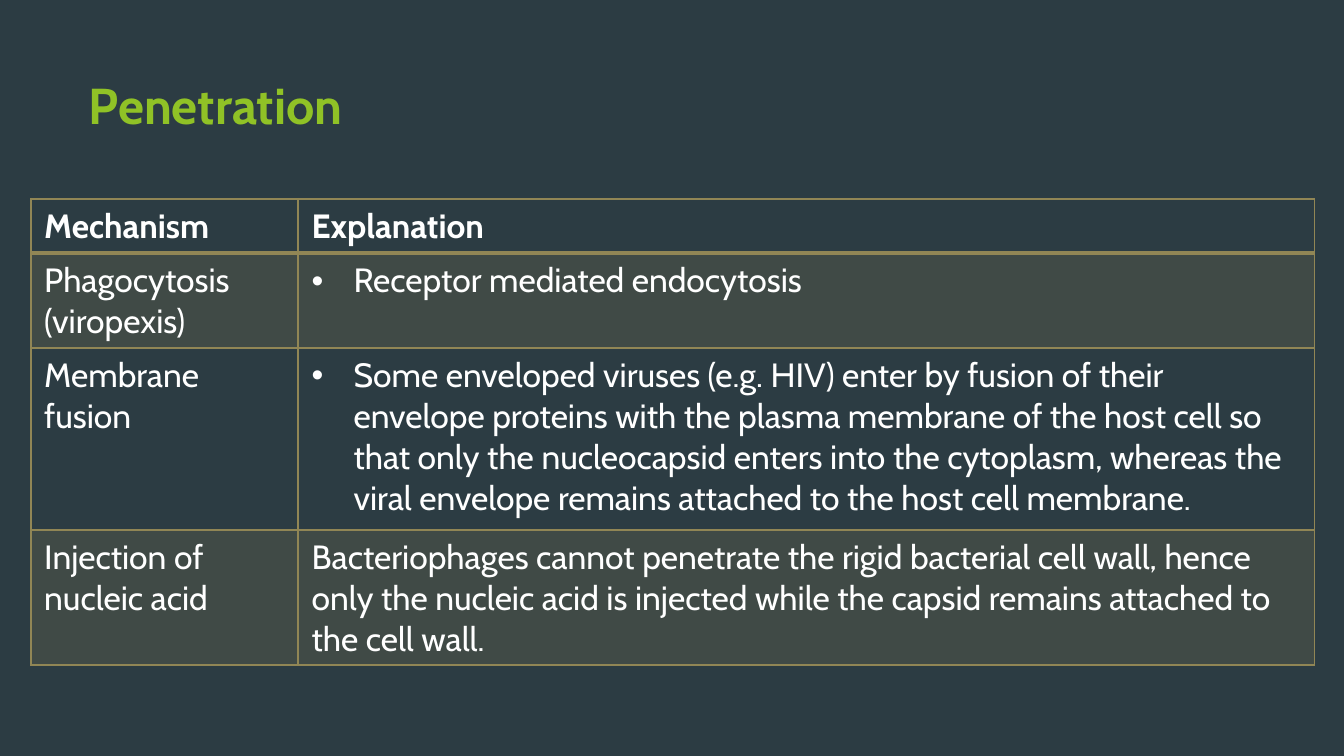
from dataclasses import dataclass

from lxml import etree
from pptx import Presentation
from pptx.dml.color import RGBColor
from pptx.enum.text import MSO_ANCHOR
from pptx.oxml.ns import qn
from pptx.util import Pt

TOP = MSO_ANCHOR.TOP
PX = 9525


@dataclass(frozen=True)
class Theme:
    """Colours, font and type sizes of the slide."""
    background: str = "2C3C43"
    title: str = "90C226"
    body: str = "FFFFFF"
    accent: str = "918655"
    font: str = "Cabin"
    title_size: int = 27
    body_size: int = 18
    band_alpha: int = 20000
    bullet_indent: int = 30
    cell_margin: int = 5


THEME = Theme()
BULLET = "• "
COLUMNS = (191, 726)
ROW_HEIGHTS = (21, 62, 130, 84)
ROWS = (
    ("Mechanism", "Explanation"),
    ("Phagocytosis\n(viropexis)", "• Receptor mediated endocytosis"),
    ("Membrane fusion",
     "• Some enveloped viruses (e.g. HIV) enter by fusion of their envelope "
     "proteins with the plasma membrane of the host cell so that only the "
     "nucleocapsid enters into the cytoplasm, whereas the viral envelope "
     "remains attached to the host cell membrane."),
    ("Injection of nucleic acid",
     "Bacteriophages cannot penetrate the rigid bacterial cell wall, hence "
     "only the nucleic acid is injected while the capsid remains attached "
     "to the cell wall."),
)


def px(*lengths):
    """Turn px lengths into EMU."""
    return [length * PX for length in lengths]


def add_bullet(p):
    """Give a paragraph a hanging bullet."""
    indent = THEME.bullet_indent * PX
    pPr = p._p.get_or_add_pPr()
    pPr.set("marL", str(indent))
    pPr.set("indent", str(-indent))
    etree.SubElement(pPr, qn("a:buFont"), typeface="Arial")
    etree.SubElement(pPr, qn("a:buChar"), char="•")


def write(tf, text, size, color, bold):
    """Fill a text frame, one paragraph per line of text."""
    tf.word_wrap = True
    for i, line in enumerate(text.split("\n")):
        p = tf.paragraphs[0] if i == 0 else tf.add_paragraph()
        if line.startswith(BULLET):
            add_bullet(p)
        r = p.add_run()
        r.text = line.removeprefix(BULLET)
        values = {"name": THEME.font, "size": Pt(size), "bold": bold}
        for name, value in values.items():
            setattr(r.font, name, value)
        r.font.color.rgb = RGBColor.from_string(color)


def fill_cell(cell, banded):
    """Give a cell a translucent band or no fill."""
    if not banded:
        cell.fill.background()
        return
    cell.fill.solid()
    cell.fill.fore_color.rgb = RGBColor.from_string(THEME.accent)
    color = cell._tc.tcPr.find(".//" + qn("a:srgbClr"))
    etree.SubElement(color, qn("a:alpha"), val=str(THEME.band_alpha))


def border_cell(cell, widths):
    """Draw the cell borders, with a width in points for each side."""
    tcPr = cell._tc.get_or_add_tcPr()
    for i, (side, width) in enumerate(widths.items()):
        ln = etree.Element(qn("a:ln" + side), w=str(Pt(width)))
        fill = etree.SubElement(ln, qn("a:solidFill"))
        etree.SubElement(fill, qn("a:srgbClr"), val=THEME.accent)
        tcPr.insert(i, ln)


def add_title(s, x, y, w, h):
    """Place the slide title in its box."""
    tf = s.shapes.add_textbox(*px(x, y, w, h)).text_frame
    tf.vertical_anchor = TOP
    write(tf, "Penetration", THEME.title_size, THEME.title, True)


def add_mechanisms(s, x, y, w, h):
    """Place the table of penetration mechanisms in its box."""
    frame = s.shapes.add_table(len(ROWS), len(COLUMNS), *px(x, y, w, h))
    table = frame.table
    table.first_row = table.horz_banding = False
    for column, width in zip(table.columns, px(*COLUMNS)):
        column.width = width
    for row, height in zip(table.rows, px(*ROW_HEIGHTS)):
        row.height = height
    for i, texts in enumerate(ROWS):
        widths = {"L": 1, "R": 1, "T": 2 if i == 1 else 1, "B": 2 if i == 0 else 1}
        for j, text in enumerate(texts):
            cell = table.cell(i, j)
            cell.margin_top = cell.margin_bottom = THEME.cell_margin * PX
            write(cell.text_frame, text, THEME.body_size, THEME.body, i == 0)
            fill_cell(cell, i % 2 == 1)
            border_cell(cell, widths)


def main():
    """Build and save the slide."""
    prs = Presentation()
    prs.slide_width, prs.slide_height = px(960, 540)
    s = prs.slides.add_slide(prs.slide_layouts[6])
    s.background.fill.solid()
    s.background.fill.fore_color.rgb = RGBColor.from_string(THEME.background)
    add_title(s, 54, 48, 677, 104)
    add_mechanisms(s, 22, 142, 917, 307)
    prs.save("out.pptx")


if __name__ == "__main__":
    main()
